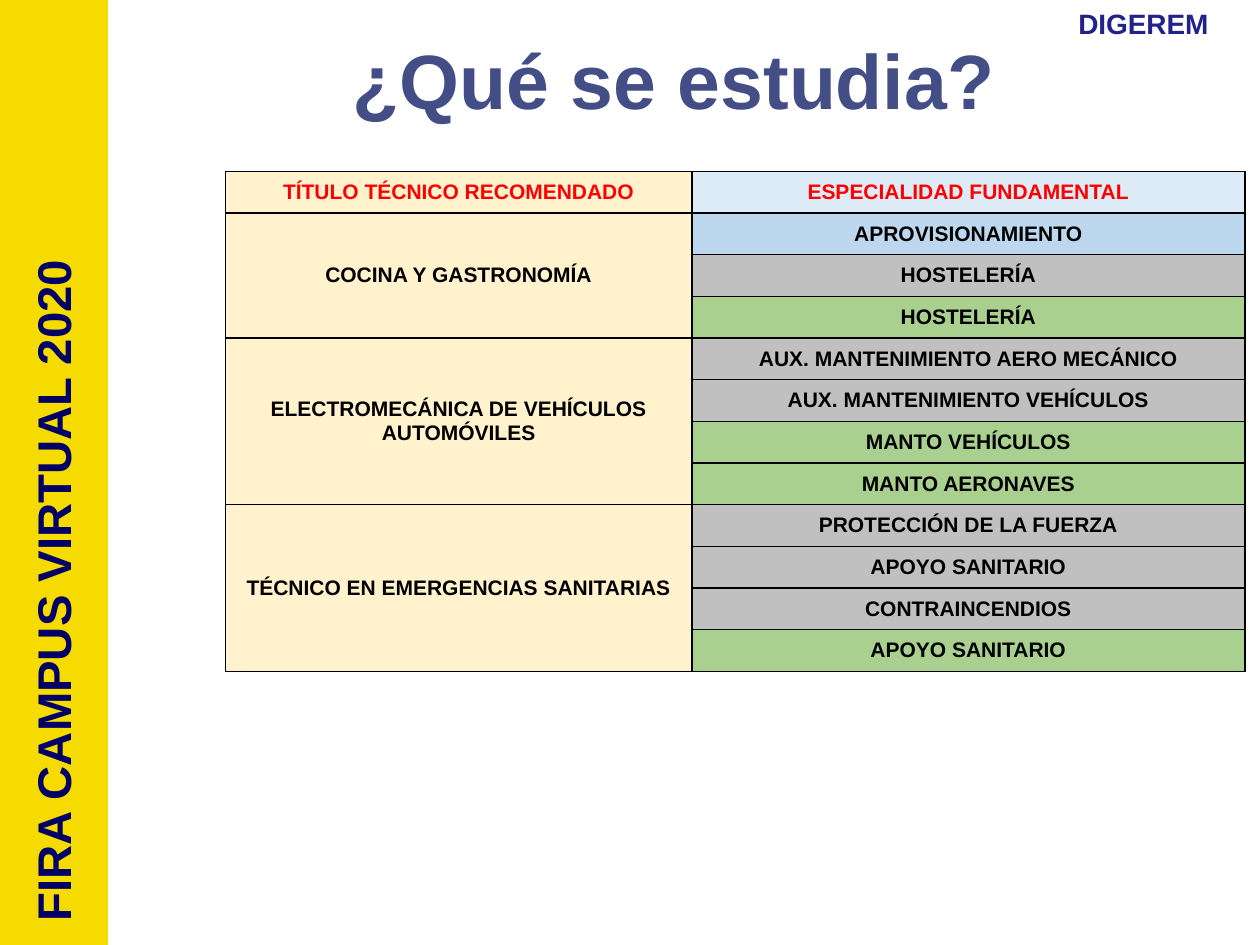
from dataclasses import dataclass

from lxml.etree import SubElement
from pptx import Presentation
from pptx.dml.color import RGBColor
from pptx.enum.shapes import MSO_SHAPE
from pptx.enum.text import MSO_ANCHOR, PP_ALIGN
from pptx.oxml.ns import qn
from pptx.util import Inches, Pt


@dataclass(frozen=True)
class Theme:
    font: str = "Arial"
    band: str = "F6DB00"
    band_text: str = "000066"
    title: str = "434E87"
    label: str = "22228B"
    header_text: str = "FF0000"
    cell_text: str = "000000"
    border: str = "000000"
    degree: str = "FFF2CC"
    header: str = "DDEBF7"
    blue: str = "BDD7EE"
    grey: str = "C0C0C0"
    green: str = "A9D08E"
    title_size: int = 44
    band_size: int = 27
    label_size: int = 16
    cell_size: int = 12
    border_width: float = 1


THEME = Theme()

HEADERS = [("TÍTULO TÉCNICO RECOMENDADO", THEME.degree),
           ("ESPECIALIDAD FUNDAMENTAL", THEME.header)]
DEGREES = [
    ("COCINA Y GASTRONOMÍA", [
        ("APROVISIONAMIENTO", THEME.blue),
        ("HOSTELERÍA", THEME.grey),
        ("HOSTELERÍA", THEME.green),
    ]),
    ("ELECTROMECÁNICA DE VEHÍCULOS AUTOMÓVILES", [
        ("AUX. MANTENIMIENTO AERO MECÁNICO", THEME.grey),
        ("AUX. MANTENIMIENTO VEHÍCULOS", THEME.grey),
        ("MANTO VEHÍCULOS", THEME.green),
        ("MANTO AERONAVES", THEME.green),
    ]),
    ("TÉCNICO EN EMERGENCIAS SANITARIAS", [
        ("PROTECCIÓN DE LA FUERZA", THEME.grey),
        ("APOYO SANITARIO", THEME.grey),
        ("CONTRAINCENDIOS", THEME.grey),
        ("APOYO SANITARIO", THEME.green),
    ]),
]


def write(frame, text, size, color):
    paragraph = frame.paragraphs[0]
    paragraph.text = text
    paragraph.alignment = PP_ALIGN.CENTER
    paragraph.font.name = THEME.font
    paragraph.font.size = Pt(size)
    paragraph.font.bold = True
    paragraph.font.color.rgb = RGBColor.from_string(color)


def add_label(slide, left, top, width, height, text, size, color):
    label = slide.shapes.add_textbox(
        Inches(left), Inches(top), Inches(width), Inches(height))
    label.text_frame.word_wrap = True
    write(label.text_frame, text, size, color)
    return label


def add_side_band(slide, left, top, width, height):
    band = slide.shapes.add_shape(
        MSO_SHAPE.RECTANGLE, Inches(left), Inches(top), Inches(width), Inches(height))
    band.shadow.inherit = False
    band.fill.solid()
    band.fill.fore_color.rgb = RGBColor.from_string(THEME.band)
    band.line.color.rgb = RGBColor.from_string(THEME.band)
    band.line.width = Pt(0.75)

    # Event name, turned to read upwards along the band
    length, depth = 5.67, 0.57
    center_x, center_y = left + width / 2, top + 4.69
    event = add_label(slide, center_x - length / 2, center_y - depth / 2, length, depth,
                      "FIRA CAMPUS VIRTUAL 2020", THEME.band_size, THEME.band_text)
    event.rotation = 270


def add_borders(cell):
    properties = cell._tc.get_or_add_tcPr()
    for position, side in enumerate(("a:lnL", "a:lnR", "a:lnT", "a:lnB")):
        border = SubElement(properties, qn(side), w=str(Pt(THEME.border_width)))
        fill = SubElement(border, qn("a:solidFill"))
        SubElement(fill, qn("a:srgbClr"), val=THEME.border)
        properties.insert(position, border)


def fill_cell(cell, text, fill, color=THEME.cell_text):
    cell.margin_left = cell.margin_right = cell.margin_top = cell.margin_bottom = 0
    cell.vertical_anchor = MSO_ANCHOR.MIDDLE
    cell.fill.solid()
    cell.fill.fore_color.rgb = RGBColor.from_string(fill)
    write(cell.text_frame, text, THEME.cell_size, color)


def add_studies_table(slide, left, top, width, height):
    row_count = 1 + sum(len(specialities) for _, specialities in DEGREES)
    table = slide.shapes.add_table(
        row_count, 2, Inches(left), Inches(top), Inches(width), Inches(height)).table
    table.first_row = table.horz_banding = False
    degree_width = 3.7
    table.columns[0].width = Inches(degree_width)
    table.columns[1].width = Inches(width - degree_width)

    for column, (heading, fill) in enumerate(HEADERS):
        fill_cell(table.cell(0, column), heading, fill, THEME.header_text)

    # Each degree spans the rows of its specialities
    first = 1
    for degree, specialities in DEGREES:
        last = first + len(specialities) - 1
        table.cell(first, 0).merge(table.cell(last, 0))
        fill_cell(table.cell(first, 0), degree, THEME.degree)
        for row, (speciality, fill) in enumerate(specialities, first):
            fill_cell(table.cell(row, 1), speciality, fill)
        first = last + 1

    for cell in table.iter_cells():
        add_borders(cell)


def main():
    presentation = Presentation()
    presentation.slide_width = Inches(10)
    presentation.slide_height = Inches(7.5)
    slide = presentation.slides.add_slide(presentation.slide_layouts[6])

    add_side_band(slide, 0, 0, 0.85, 7.5)
    add_studies_table(slide, 1.79, 1.36, 8.09, 3.97)
    # Title and department
    add_label(slide, 2.24, 0.21, 6.22, 0.83,
              "¿Qué se estudia?", THEME.title_size, THEME.title)
    add_label(slide, 8.15, 0, 1.85, 0.37,
              "DIGEREM", THEME.label_size, THEME.label)

    presentation.save("out.pptx")


if __name__ == "__main__":
    main()
